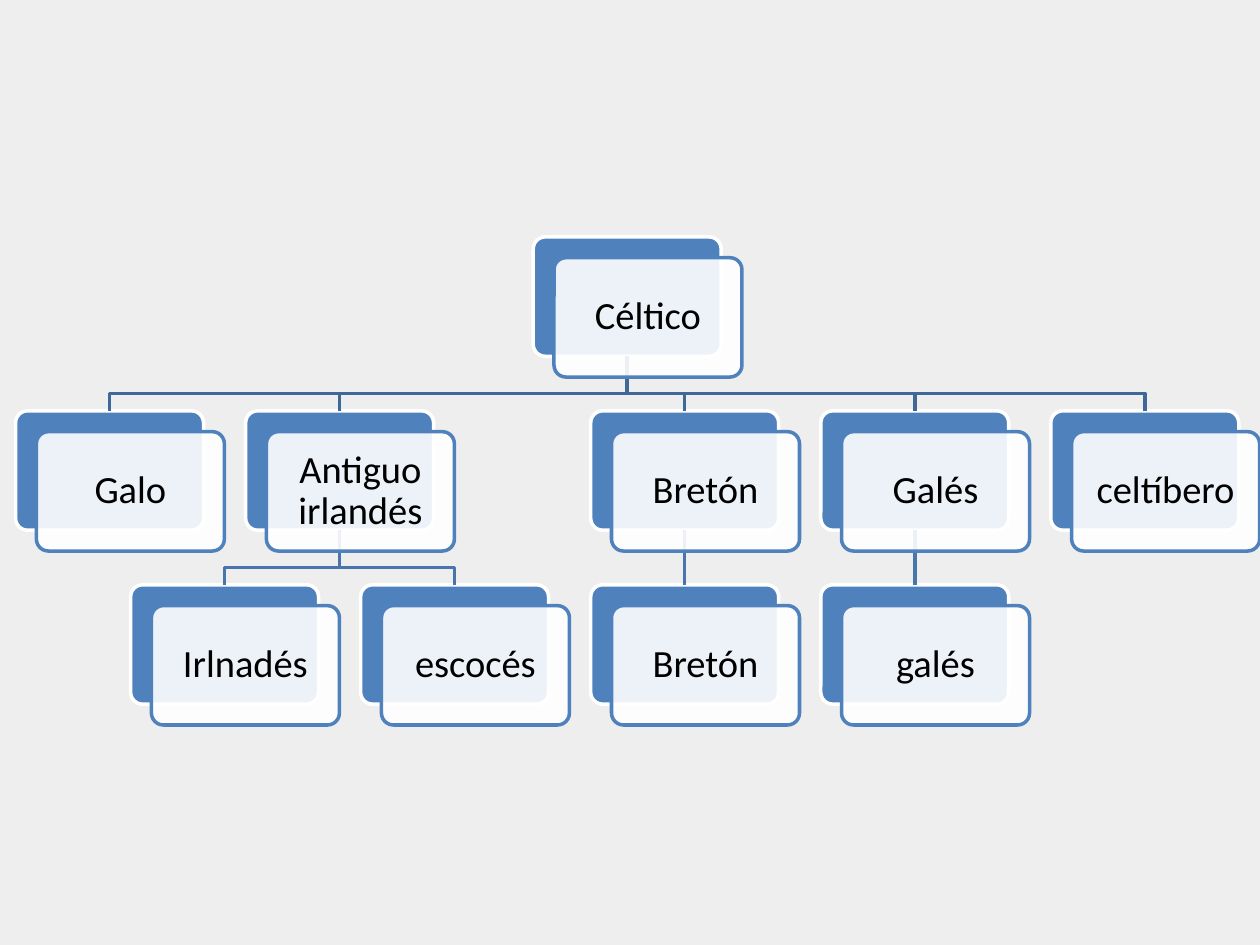
from lxml.etree import SubElement
from pptx import Presentation
from pptx.dml.color import RGBColor
from pptx.enum.shapes import MSO_CONNECTOR, MSO_SHAPE
from pptx.enum.text import MSO_ANCHOR, PP_ALIGN
from pptx.oxml.ns import qn
from pptx.util import Pt

BACKGROUND = RGBColor(0xEE, 0xEE, 0xEE)
BLUE = RGBColor(0x4F, 0x81, 0xBD)
WHITE = RGBColor(0xFF, 0xFF, 0xFF)
BLACK = RGBColor(0x00, 0x00, 0x00)
BRANCH_COLORS = (RGBColor(0x3F, 0x67, 0x97), RGBColor(0x48, 0x75, 0xAC))

CARD_WIDTH, CARD_HEIGHT = 107.4, 68.2
CARD_OFFSET = 11.9
COLUMN_STEP, LEVEL_STEP = 131.46, 99.4
BRANCH_DROP = 9.9

LANGUAGES = [
    ("Céltico", 2.25, 0, None),
    ("Galo", 0, 1, 0),
    ("Antiguo irlandés", 1, 1, 0),
    ("Irlnadés", 0.5, 2, 2),
    ("escocés", 1.5, 2, 2),
    ("Bretón", 2.5, 1, 0),
    ("Bretón", 2.5, 2, 5),
    ("Galés", 3.5, 1, 0),
    ("galés", 3.5, 2, 7),
    ("celtíbero", 4.5, 1, 0),
]


def write_text(card, text, *, size, font, color):
    """Write centred text inside a card."""
    frame = card.text_frame
    frame.word_wrap = True
    frame.vertical_anchor = MSO_ANCHOR.MIDDLE
    frame.margin_left = frame.margin_right = Pt(6.5)
    frame.margin_top = frame.margin_bottom = Pt(6.5)
    paragraph = frame.paragraphs[0]
    paragraph.text = text
    paragraph.alignment = PP_ALIGN.CENTER
    paragraph.line_spacing = 0.9
    paragraph.font.size = Pt(size)
    paragraph.font.name = font
    paragraph.font.color.rgb = color


def add_card(slide, left, top, fill, line):
    """Add one rounded card."""
    card = slide.shapes.add_shape(
        MSO_SHAPE.ROUNDED_RECTANGLE, Pt(left), Pt(top), Pt(CARD_WIDTH), Pt(CARD_HEIGHT)
    )
    card.adjustments[0] = 0.1
    card.shadow.inherit = False
    card.fill.solid()
    card.fill.fore_color.rgb = fill
    card.line.color.rgb = line
    card.line.width = Pt(2)
    return card


def add_label_card(slide, left, top, text):
    """Add the translucent front card with its language name."""
    card = add_card(slide, left + CARD_OFFSET, top + CARD_OFFSET, WHITE, BLUE)
    color = card.fill._xPr.find(qn("a:solidFill"))[0]
    SubElement(color, qn("a:alpha"), val="90000")
    write_text(card, text, size=22, font="Calibri", color=BLACK)


def add_branch(slide, parent, child, color):
    """Link the bottom of a parent card to the top of a child card."""
    start_x = parent.left + parent.width // 2
    start_y = parent.top + parent.height
    end_x = child.left + child.width // 2
    if start_x == end_x:
        branch = slide.shapes.add_connector(
            MSO_CONNECTOR.STRAIGHT, start_x, start_y, end_x, child.top
        )
        branch.begin_connect(parent, 2)
        branch.end_connect(child, 0)
        SubElement(branch._element.spPr, qn("a:effectLst"))
    else:
        bend_y = child.top - Pt(BRANCH_DROP)
        outline = slide.shapes.build_freeform(start_x, start_y)
        outline.add_line_segments(
            [(start_x, bend_y), (end_x, bend_y), (end_x, child.top)], close=False
        )
        branch = outline.convert_to_shape()
        branch.shadow.inherit = False
        branch.fill.background()
    branch.line.color.rgb = color
    branch.line.width = Pt(2)


def add_language_tree(slide, left, top):
    """Draw the tree with its first column and root at the given corner."""
    corners = [
        (left + column * COLUMN_STEP, top + level * LEVEL_STEP)
        for _, column, level, _ in LANGUAGES
    ]
    back_cards = [add_card(slide, x, y, BLUE, WHITE) for x, y in corners]
    for back_card, (_, _, level, parent) in zip(back_cards, LANGUAGES):
        if parent is not None:
            add_branch(slide, back_cards[parent], back_card, BRANCH_COLORS[level - 1])
    for (x, y), (name, *_) in zip(corners, LANGUAGES):
        add_label_card(slide, x, y, name)


def main():
    """Build the slide and save it."""
    presentation = Presentation()
    presentation.slide_width, presentation.slide_height = Pt(720), Pt(540)
    slide = presentation.slides.add_slide(presentation.slide_layouts[6])
    slide.background.fill.solid()
    slide.background.fill.fore_color.rgb = BACKGROUND
    add_language_tree(slide, 8.9, 135.4)
    presentation.save("out.pptx")


if __name__ == "__main__":
    main()
